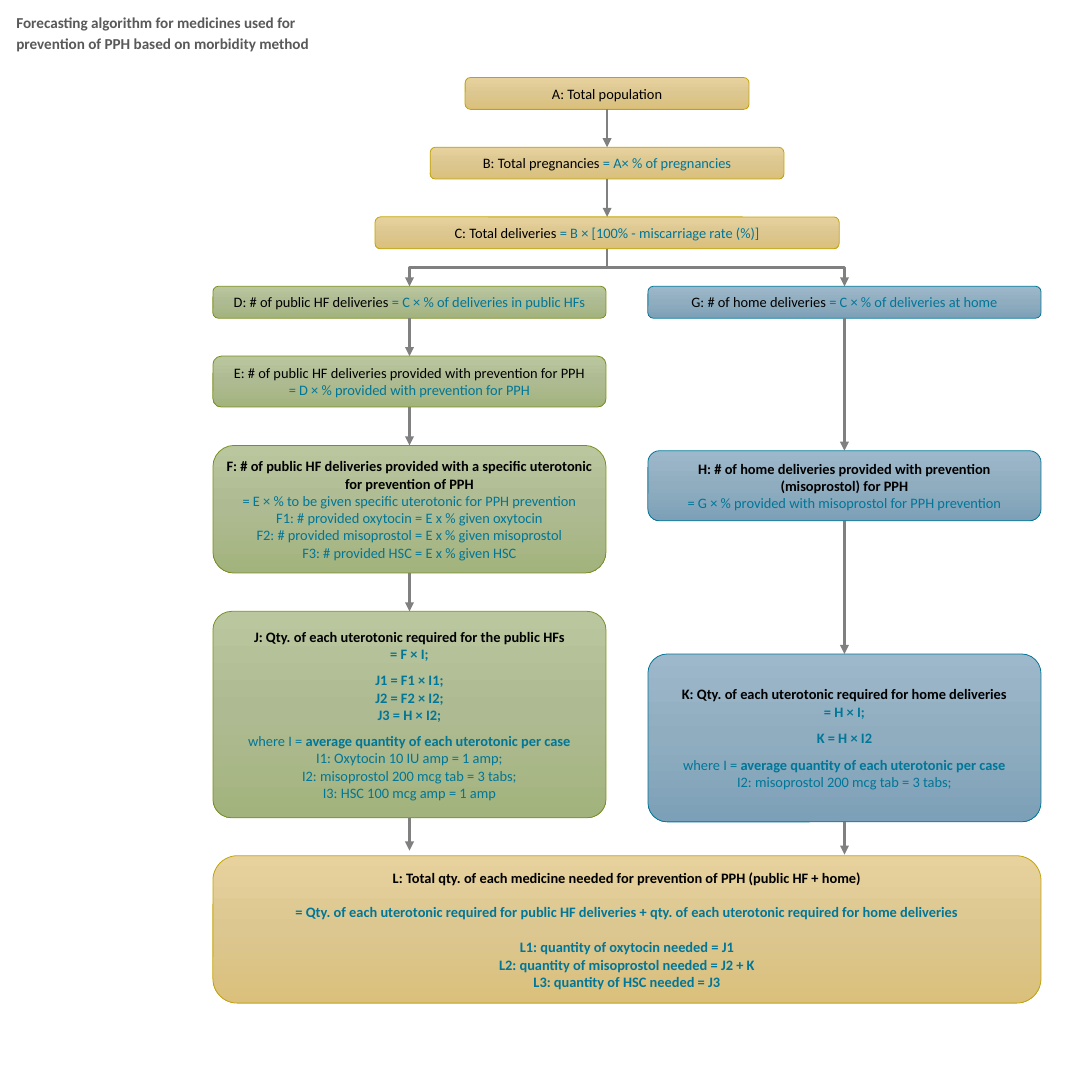
from copy import deepcopy

from lxml import etree
from pptx import Presentation
from pptx.dml.color import RGBColor
from pptx.enum.shapes import MSO_CONNECTOR, MSO_SHAPE
from pptx.enum.text import MSO_ANCHOR, MSO_AUTO_SIZE, PP_ALIGN
from pptx.oxml.ns import qn
from pptx.util import Pt

STRAIGHT, ELBOW = MSO_CONNECTOR.STRAIGHT, MSO_CONNECTOR.ELBOW
ROUNDED = MSO_SHAPE.ROUNDED_RECTANGLE
MIDDLE, TOP = MSO_ANCHOR.MIDDLE, MSO_ANCHOR.TOP
NO_FIT = MSO_AUTO_SIZE.NONE
CENTER, LEFT = PP_ALIGN.CENTER, PP_ALIGN.LEFT

BLACK = RGBColor(0x00, 0x00, 0x00)
TEAL = RGBColor(0x00, 0x76, 0x98)
GREY = RGBColor(0x80, 0x80, 0x80)
TITLE_GREY = RGBColor(0x59, 0x59, 0x59)
GOLD_LINE = RGBColor(0xC2, 0xA2, 0x04)
GREEN_LINE = RGBColor(0x78, 0x8E, 0x1E)
GOLD_FILL = (RGBColor(0xE7, 0xD1, 0x9D), RGBColor(0xDD, 0xC7, 0x90), RGBColor(0xDA, 0xC0, 0x7C))
GREEN_FILL = (RGBColor(0xBA, 0xC6, 0x9E), RGBColor(0xAE, 0xBB, 0x92), RGBColor(0xA3, 0xB3, 0x7D))
BLUE_FILL = (RGBColor(0x9D, 0xB8, 0xCA), RGBColor(0x90, 0xAD, 0xC0), RGBColor(0x7C, 0xA0, 0xB7))
GOLD, GREEN, BLUE = (GOLD_FILL, GOLD_LINE), (GREEN_FILL, GREEN_LINE), (BLUE_FILL, TEAL)

FONT = "Calibri"
TEXT_SIZE = 9.5
BLANK_LINE = 11.6
TRUNK_X, GREEN_X, BLUE_X = 400.3, 270, 556.8
BRANCH_WIDTH = 259.2
ROW_HEIGHT = 21
ARROW_TO_TOTAL = 21.6


def line(*spans, after=0):
    return spans, after


def name(text, bold=False):
    return text, BLACK, bold


def formula(text, bold=False):
    return text, TEAL, bold


PER_CASE = line(formula("where I = "),
                formula("average quantity of each uterotonic per case", True))
MISOPROSTOL = line(formula("I2: misoprostol 200 mcg tab = 3 tabs;"))

BOXES = {
    "A": (TRUNK_X, 51.1, 187.2, ROW_HEIGHT, GOLD, [line(name("A: Total population"))]),
    "B": (TRUNK_X, 97.1, 233.3, ROW_HEIGHT, GOLD, [
        line(name("B: Total pregnancies "), formula("= A× % of pregnancies"))]),
    "C": (TRUNK_X, 143, 306, ROW_HEIGHT, GOLD, [
        line(name("C: Total deliveries "), formula("= B × [100% - miscarriage rate (%)]"))]),
    "D": (GREEN_X, 188.8, BRANCH_WIDTH, ROW_HEIGHT, GREEN, [
        line(name("D: # of public HF deliveries "), formula("= C × % of deliveries in public HFs"))]),
    "G": (BLUE_X, 188.8, BRANCH_WIDTH, ROW_HEIGHT, BLUE, [
        line(name("G: # of home deliveries "), formula("= C × % of deliveries at home"))]),
    "E": (GREEN_X, 234.8, BRANCH_WIDTH, 33.6, GREEN, [
        line(name("E: # of public HF deliveries provided with prevention for PPH")),
        line(formula("= D × % provided with prevention for PPH"))]),
    "H": (BLUE_X, 297.2, BRANCH_WIDTH, 46.2, BLUE, [
        line(name("H: # of home deliveries provided with prevention (misoprostol) for PPH", True)),
        line(formula("= G × % provided with misoprostol for PPH prevention"))]),
    "F": (GREEN_X, 293.7, BRANCH_WIDTH, 84.2, GREEN, [
        line(name("F: # of public HF deliveries provided with a specific uterotonic "
                  "for prevention of PPH", True)),
        line(formula("= E × % to be given specific uterotonic for PPH prevention")),
        line(formula("F1: # provided oxytocin = E x % given oxytocin")),
        line(formula("F2: # provided misoprostol = E x % given misoprostol")),
        line(formula("F3: # provided HSC = E x % given HSC"))]),
    "J": (GREEN_X, 403.1, BRANCH_WIDTH, 136.1, GREEN, [
        line(name("J: Qty. of each uterotonic required for the public HFs", True)),
        line(formula("= F × I;", True), after=6),
        line(formula("J1 = F1 × I1;", True)),
        line(formula("J2 = F2 × I2;", True)),
        line(formula("J3 = H × I2;", True), after=6),
        PER_CASE,
        line(formula("I1: Oxytocin 10 IU amp = 1 amp;")),
        MISOPROSTOL,
        line(formula("I3: HSC 100 mcg amp = 1 amp"))]),
    "K": (BLUE_X, 431.2, BRANCH_WIDTH, 110.7, BLUE, [
        line(name("K: Qty. of each uterotonic required for home deliveries", True)),
        line(formula("= H × I;", True), after=6),
        line(formula("K = H × I2", True), after=6),
        PER_CASE,
        MISOPROSTOL]),
    "L": (413.4, 564.2, 546, 97.2, GOLD, [
        line(name("L: Total qty. of each medicine needed for prevention of PPH "
                  "(public HF + home)", True), after=BLANK_LINE),
        line(formula("= Qty. of each uterotonic required for public HF deliveries + "
                     "qty. of each uterotonic required for home deliveries", True), after=BLANK_LINE),
        line(formula("L1: quantity of oxytocin needed = J1", True)),
        line(formula("L2: quantity of misoprostol needed = J2 + K", True)),
        line(formula("L3: quantity of HSC needed = J3", True))]),
}
CORNERS = {"J": 0.09, "K": 0.115}
STEPS = ["AB", "BC", "DE", "EF", "FJ", "GH", "HK"]


def set_font(font, size, color, bold):
    font.name, font.size, font.bold = FONT, Pt(size), bold
    font.color.rgb = color


def fill_gradient(box, colors):
    box.fill.gradient()
    box.fill.gradient_angle = 270
    first = box._element.spPr.find(".//" + qn("a:gs"))
    first.addnext(deepcopy(first))
    for stop, color, position in zip(box.fill.gradient_stops, colors, (0, 0.5, 1)):
        stop.color.rgb = color
        stop.position = position


def write_lines(frame, lines):
    for index, (spans, after) in enumerate(lines):
        para = frame.paragraphs[0] if index == 0 else frame.add_paragraph()
        para.alignment = CENTER
        para.space_after = Pt(after)
        if len(spans) == 1:
            set_font(para.font, TEXT_SIZE, *spans[0][1:])
        for text, color, bold in spans:
            span = para.add_run()
            span.text = text
            if len(spans) > 1:
                set_font(span.font, TEXT_SIZE, color, bold)


def add_box(page, center, top, width, height, palette, lines):
    box = page.shapes.add_shape(ROUNDED, Pt(center - width / 2), Pt(top), Pt(width), Pt(height))
    box.shadow.inherit = False
    colors, edge = palette
    fill_gradient(box, colors)
    box.line.color.rgb = edge
    box.line.width = Pt(0.5)
    frame = box.text_frame
    frame.word_wrap = True
    frame.vertical_anchor = MIDDLE
    frame.margin_left = frame.margin_right = frame.margin_top = frame.margin_bottom = Pt(3.6)
    write_lines(frame, lines)
    return box


def add_arrow(page, kind, x1, y1, x2, y2):
    arrow = page.shapes.add_connector(kind, Pt(x1), Pt(y1), Pt(x2), Pt(y2))
    arrow.line.color.rgb = GREY
    arrow.line.width = Pt(1.5)
    etree.SubElement(arrow.line._get_or_add_ln(), qn("a:tailEnd"), type="triangle")
    etree.SubElement(arrow._element.spPr, qn("a:effectLst"))
    return arrow


def add_step(page, boxes, source, target):
    x1, top, _, height = BOXES[source][:4]
    x2, end = BOXES[target][:2]
    arrow = add_arrow(page, STRAIGHT, x1, top + height, x2, end)
    arrow.begin_connect(boxes[source], 2)
    arrow.end_connect(boxes[target], 0)


def add_branch(page, source, target):
    x1, top, _, height = BOXES[source][:4]
    x2, end = BOXES[target][:2]
    start = top + height
    drop, span = end - start, abs(x2 - x1)
    left, upper = (x1 + x2 - drop) / 2, (start + end - span) / 2
    arrow = add_arrow(page, ELBOW, left, upper, left + drop, upper + span)
    frame = arrow._element.spPr.find(qn("a:xfrm"))
    frame.set("rot", "5400000" if x2 < x1 else "16200000")
    if x2 > x1:
        frame.set("flipH", "1")


def add_total_arrow(page, boxes, source):
    x, top, _, height = BOXES[source][:4]
    bottom = top + height
    arrow = add_arrow(page, STRAIGHT, x, bottom, x, bottom + ARROW_TO_TOTAL)
    arrow.begin_connect(boxes[source], 2)


def add_title(page, text):
    title = page.shapes.title
    title.left, title.top, title.width, title.height = Pt(3.6), Pt(3.6), Pt(243.4), Pt(33.8)
    frame = title.text_frame
    frame.word_wrap = True
    frame.auto_size = NO_FIT
    frame.vertical_anchor = TOP
    frame.text = text
    para = frame.paragraphs[0]
    para.alignment = LEFT
    para.line_spacing = 1.15
    para.space_before, para.space_after = Pt(6), Pt(18)
    set_font(para.font, 10, TITLE_GREY, True)


def main():
    deck = Presentation()
    deck.slide_width = deck.slide_height = Pt(720)
    page = deck.slides.add_slide(deck.slide_layouts[5])
    add_title(page, "Forecasting algorithm for medicines used for prevention of PPH "
                    "based on morbidity method")
    boxes = {}
    for letter, content in BOXES.items():
        boxes[letter] = add_box(page, *content)
        if letter in CORNERS:
            boxes[letter].adjustments[0] = CORNERS[letter]
    for source, target in STEPS:
        add_step(page, boxes, source, target)
    for target in "DG":
        add_branch(page, "C", target)
    for source in "JK":
        add_total_arrow(page, boxes, source)
    deck.save("out.pptx")


if __name__ == "__main__":
    main()
